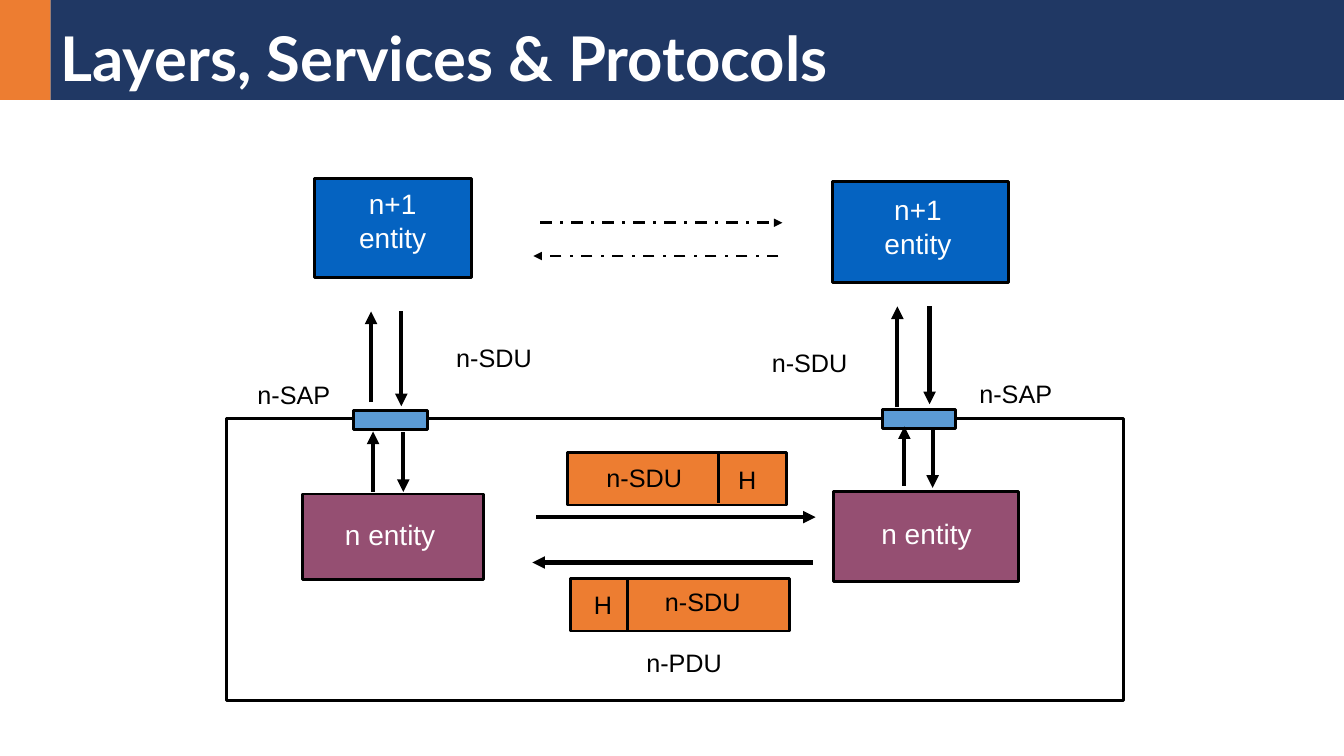
from dataclasses import dataclass

from lxml.etree import SubElement
from pptx import Presentation
from pptx.dml.color import RGBColor
from pptx.enum.dml import MSO_LINE
from pptx.enum.shapes import MSO_CONNECTOR, MSO_SHAPE
from pptx.enum.text import MSO_ANCHOR, MSO_AUTO_SIZE, PP_ALIGN
from pptx.oxml.ns import qn
from pptx.util import Inches, Pt


@dataclass(frozen=True)
class Theme:
    navy: str = "203864"
    orange: str = "ED7D31"
    blue: str = "0563C1"
    light_blue: str = "5B9BD5"
    plum: str = "954F72"
    black: str = "000000"
    white: str = "FFFFFF"
    title_font: str = "Lato"
    body_font: str = "Arial"
    title_size: int = 44
    entity_size: int = 20
    label_size: int = 18
    outline: int = 2
    arrow: int = 3


class SlideBuilder:
    def __init__(self, slide, theme):
        self.slide = slide
        self.theme = theme

    def font(self, p, name, size, color, bold=False):
        p.font.name = name
        p.font.size = Pt(size)
        p.font.bold = bold
        p.font.color.rgb = RGBColor.from_string(color)

    def title(self, text, left, top, width, height):
        t = self.theme
        sp = self.slide.shapes.title
        sp.left, sp.top = Inches(left), Inches(top)
        sp.width, sp.height = Inches(width), Inches(height)
        sp.fill.solid()
        sp.fill.fore_color.rgb = RGBColor.from_string(t.navy)
        tf = sp.text_frame
        tf.text = text
        tf.word_wrap = True
        tf.auto_size = MSO_AUTO_SIZE.NONE
        tf.vertical_anchor = MSO_ANCHOR.BOTTOM
        p = tf.paragraphs[0]
        p.alignment = PP_ALIGN.LEFT
        p.line_spacing = 0.9
        self.font(p, t.title_font, t.title_size, t.white, bold=True)

    def box(self, left, top, width, height, fill=None, outlined=True):
        sp = self.slide.shapes.add_shape(
            MSO_SHAPE.RECTANGLE, Inches(left), Inches(top), Inches(width), Inches(height))
        sp.shadow.inherit = False
        if fill:
            sp.fill.solid()
            sp.fill.fore_color.rgb = RGBColor.from_string(fill)
        else:
            sp.fill.background()
        if outlined:
            sp.line.color.rgb = RGBColor.from_string(self.theme.black)
            sp.line.width = Pt(self.theme.outline)
        else:
            sp.line.fill.background()

    def text(self, lines, left, top, width, height, size, color):
        sp = self.slide.shapes.add_textbox(
            Inches(left), Inches(top), Inches(width), Inches(height))
        tf = sp.text_frame
        tf.text = lines
        tf.word_wrap = False
        tf.vertical_anchor = MSO_ANCHOR.MIDDLE
        for p in tf.paragraphs:
            p.alignment = PP_ALIGN.CENTER
            self.font(p, self.theme.body_font, size, color)

    def entity_text(self, lines, left, top, width, height):
        self.text(lines, left, top, width, height, self.theme.entity_size, self.theme.white)

    def label(self, text, left, top, width=0.96):
        self.text(text, left, top, width, 0.4, self.theme.label_size, self.theme.black)

    def line(self, x1, y1, x2, y2, width, dash=None, arrow=True):
        cx = self.slide.shapes.add_connector(
            MSO_CONNECTOR.STRAIGHT, Inches(x1), Inches(y1), Inches(x2), Inches(y2))
        cx.line.color.rgb = RGBColor.from_string(self.theme.black)
        cx.line.width = Pt(width)
        if dash:
            cx.line.dash_style = dash
        if arrow:
            SubElement(cx.line._get_or_add_ln(), qn("a:tailEnd"), type="triangle")
        SubElement(cx._element.spPr, qn("a:effectLst"))


def main():
    prs = Presentation()
    prs.slide_width, prs.slide_height = Inches(13.33), Inches(7.5)
    theme = Theme()
    s = SlideBuilder(prs.slides.add_slide(prs.slide_layouts[5]), theme)

    s.title("Layers, Services & Protocols", 0.5, 0, 12.83, 0.99)
    s.box(0, 0, 0.5, 0.99, theme.orange, outlined=False)

    s.box(2.25, 4.15, 8.89, 2.8)
    for rect, fill in (
        ((3.12, 1.77, 1.56, 0.98), theme.blue),
        ((8.26, 1.8, 1.74, 1), theme.blue),
        ((3, 4.9, 1.8, 0.85), theme.plum),
        ((8.27, 4.88, 1.83, 0.89), theme.plum),
        ((5.63, 4.49, 2.17, 0.52), theme.orange),
        ((5.66, 5.74, 2.17, 0.52), theme.orange),
    ):
        s.box(*rect, fill)

    for ends in (
        (5.32, 5.13, 8.09, 5.13),
        (8.06, 5.58, 5.28, 5.58),
        (3.68, 3.99, 3.68, 3.09),
        (3.98, 3.09, 3.98, 4.03),
        (8.9, 4.04, 8.9, 3.04),
        (9.22, 3.04, 9.22, 4.01),
    ):
        s.line(*ends, theme.arrow)

    for ends in ((5.36, 2.21, 7.76, 2.21), (7.72, 2.54, 5.29, 2.54)):
        s.line(*ends, theme.outline, dash=MSO_LINE.DASH_DOT)

    for left, top in ((3.51, 4.07), (8.75, 4.06)):
        s.box(left, top, 0.73, 0.19, theme.light_blue)

    for ends in (
        (3.7, 4.88, 3.7, 4.28),
        (4, 4.29, 4, 4.88),
        (8.97, 4.82, 8.97, 4.23),
        (9.25, 4.25, 9.25, 4.84),
    ):
        s.line(*ends, theme.arrow)

    for x, top in ((7.13, 4.49), (6.22, 5.75)):
        s.line(x, top, x, top + 0.5, theme.outline, arrow=False)

    for left, top in ((3.46, 1.8), (8.67, 1.86)):
        s.entity_text("n+1\nentity", left, top, 0.87, 0.77)
    for left, top in ((3.32, 5.09), (8.64, 5.08)):
        s.entity_text("n entity", left, top, 1.1, 0.43)

    for left, top in ((2.45, 3.71), (9.61, 3.7)):
        s.label("n-SAP", left, top, 0.93)
    for left, top in ((4.42, 3.35), (7.55, 3.4), (5.91, 4.54), (6.49, 5.77)):
        s.label("n-SDU", left, top)
    for left, top in ((7.22, 4.56), (5.79, 5.8)):
        s.label("H", left, top, 0.38)
    s.label("n-PDU", 6.16, 6.37, 1.25)

    prs.save("out.pptx")


if __name__ == "__main__":
    main()
